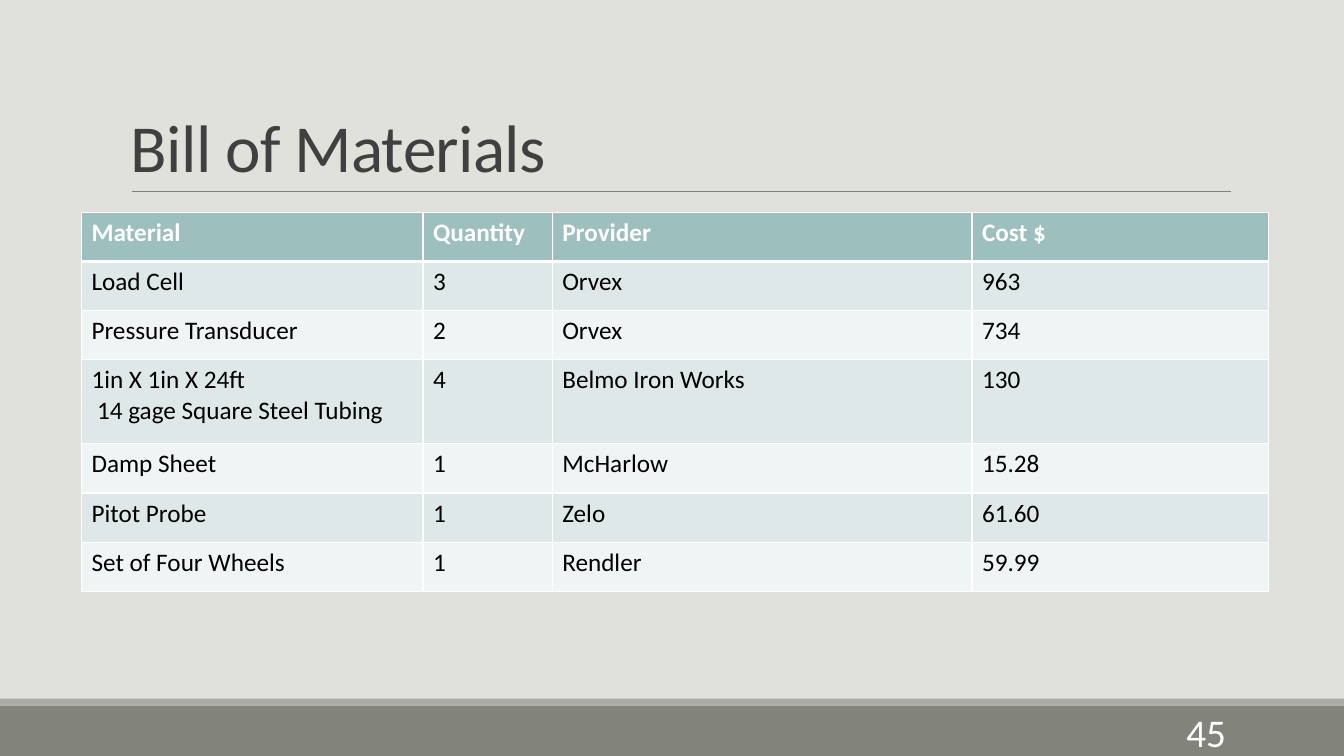
import lxml.etree
import pptx
import pptx.dml.color
import pptx.enum.shapes
import pptx.enum.text
import pptx.oxml.ns
import pptx.util

Pt = pptx.util.Pt
ALIGN = pptx.enum.text.PP_ALIGN
ANCHOR = pptx.enum.text.MSO_ANCHOR
SLIDE_WIDTH, SLIDE_HEIGHT = 960, 540
COLUMN_WIDTHS = [244, 92.3, 299.8, 212]
ROW_HEIGHT, TALL_ROW_HEIGHT = 35.1, 60.2
MATERIALS = [
    ["Material", "Quantity", "Provider", "Cost $"],
    ["Load Cell", "3", "Orvex", "963"],
    ["Pressure Transducer", "2", "Orvex", "734"],
    ["1in X 1in X 24ft\n14 gage Square Steel Tubing", "4", "Belmo Iron Works", "130"],
    ["Damp Sheet", "1", "McHarlow", "15.28"],
    ["Pitot Probe", "1", "Zelo", "61.60"],
    ["Set of Four Wheels", "1", "Rendler", "59.99"],
]


def color(value):
    """Turn a hex string into a colour."""
    return pptx.dml.color.RGBColor.from_string(value)


def add_span(para, text, ink, **formats):
    """Add a run of text with the given font values."""
    span = para.add_run()
    span.text = text
    for name, value in {"name": "Calibri", **formats}.items():
        setattr(span.font, name, value)
    span.font.color.rgb = color(ink)
    return span


def add_text_box(page, box, anchor):
    """Add a wrapping text box and return its first paragraph."""
    frame = page.shapes.add_textbox(*map(Pt, box)).text_frame
    frame.word_wrap = True
    frame.vertical_anchor = anchor
    return frame.paragraphs[0]


def add_band(page, box, fill):
    """Add a plain filled rectangle."""
    band = page.shapes.add_shape(pptx.enum.shapes.MSO_SHAPE.RECTANGLE, *map(Pt, box))
    band.shadow.inherit = False
    band.fill.solid()
    band.fill.fore_color.rgb = color(fill)
    band.line.fill.background()


def add_footer(page, box, number):
    """Draw the footer bands and the page number."""
    left, top, width, height = box
    strip = 5
    add_band(page, (left, top + strip, width, height - strip), "82847C")
    add_band(page, (left, top, width, strip), "ACADA8")
    para = add_text_box(page, (left + 780, top + 9.3, 102.8, 28.8), ANCHOR.MIDDLE)
    para.alignment = ALIGN.RIGHT
    add_span(para, number, "FFFFFF", size=Pt(28))


def add_title(page, box, text):
    """Write the title and rule a line under it."""
    left, top, width, height = box
    para = add_text_box(page, box, ANCHOR.BOTTOM)
    para.line_spacing = 0.85
    span = add_span(para, text, "404040", size=Pt(48))
    span.font._element.set("spc", "-50")
    bottom = top + height
    rule = page.shapes.add_connector(
        pptx.enum.shapes.MSO_CONNECTOR.STRAIGHT,
        *map(Pt, (left + 7.9, bottom, left + width + 0.7, bottom)))
    rule.line.color.rgb = color("808080")
    rule.line.width = Pt(0.5)
    lxml.etree.SubElement(rule._element.spPr, pptx.oxml.ns.qn("a:effectLst"))


def set_borders(cell, widths):
    """Give a cell white borders of the given widths by side."""
    properties = cell._tc.get_or_add_tcPr()
    for side, width in widths.items():
        line = lxml.etree.SubElement(
            properties, pptx.oxml.ns.qn(f"a:ln{side}"), w=str(int(Pt(width))))
        fill = lxml.etree.SubElement(line, pptx.oxml.ns.qn("a:solidFill"))
        lxml.etree.SubElement(fill, pptx.oxml.ns.qn("a:srgbClr"), val="FFFFFF")


def fill_cell(cell, text, row_index):
    """Style one cell by its row and write its lines."""
    header = row_index == 0
    set_borders(cell, {"L": 1, "R": 1, "T": 3 if row_index == 1 else 1, "B": 3 if header else 1})
    cell.fill.solid()
    cell.fill.fore_color.rgb = color("9DBFBE" if header else ("EFF4F4", "DFE8E8")[row_index % 2])
    for index, line in enumerate(text.split("\n")):
        para = cell.text_frame.paragraphs[0] if index == 0 else cell.text_frame.add_paragraph()
        if index:
            para._p.get_or_add_pPr().set("marL", str(int(Pt(4))))
        add_span(para, line, "FFFFFF" if header else "000000", size=Pt(18), bold=header)


def add_materials_table(page, box):
    """Draw the table of materials."""
    table = page.shapes.add_table(len(MATERIALS), len(COLUMN_WIDTHS), *map(Pt, box)).table
    for column, width in zip(table.columns, COLUMN_WIDTHS):
        column.width = Pt(width)
    for row_index, values in enumerate(MATERIALS):
        tall = "\n" in values[0]
        table.rows[row_index].height = Pt(TALL_ROW_HEIGHT if tall else ROW_HEIGHT)
        for column_index, text in enumerate(values):
            fill_cell(table.cell(row_index, column_index), text, row_index)


def main():
    """Build the deck and save it."""
    deck = pptx.Presentation()
    deck.slide_width, deck.slide_height = Pt(SLIDE_WIDTH), Pt(SLIDE_HEIGHT)
    page = deck.slides.add_slide(deck.slide_layouts[6])
    page.background.fill.solid()
    page.background.fill.fore_color.rgb = color("E1E1DB")
    add_footer(page, (0, 499, SLIDE_WIDTH, 41), "45")
    add_title(page, (86.4, 22.3, 792, 114.3), "Bill of Materials")
    add_materials_table(page, (58.2, 151.6, sum(COLUMN_WIDTHS), 270.8))
    deck.save("out.pptx")


if __name__ == "__main__":
    main()
